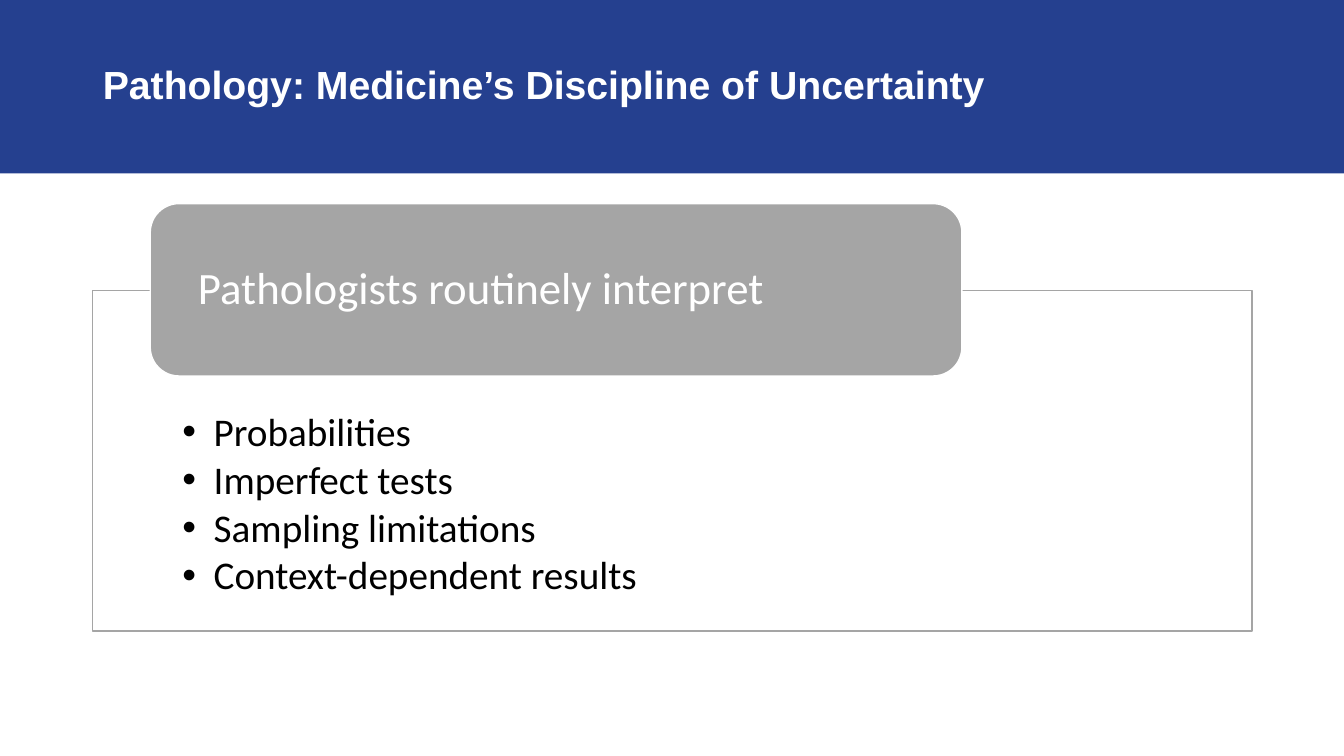
"""Build the slide on pathology as a discipline of uncertainty."""
from dataclasses import dataclass
from typing import Optional

from lxml.etree import SubElement
from pptx import Presentation
from pptx.dml.color import RGBColor
from pptx.enum.shapes import MSO_SHAPE
from pptx.enum.text import MSO_ANCHOR, PP_ALIGN
from pptx.oxml.ns import qn
from pptx.util import Inches, Pt

COLORS = {"navy": "25408F", "gray": "A5A5A5", "white": "FFFFFF", "black": "000000"}


@dataclass
class Panel:
    """A filled shape with its place and colours."""
    kind: MSO_SHAPE
    box: tuple[float, float, float, float]
    fill: str
    line: Optional[str] = None


@dataclass
class TextStyle:
    """The look of one block of text."""
    font: str
    size: int
    color: str
    margins: tuple[float, float, float, float]
    anchor: MSO_ANCHOR = MSO_ANCHOR.MIDDLE
    bold: bool = False
    bullet: bool = False
    after: float = 0


BANNER = Panel(MSO_SHAPE.RECTANGLE, (0, 0, 13.33, 1.72), "navy")
FRAME = Panel(MSO_SHAPE.RECTANGLE, (0.92, 2.88, 11.5, 3.38), "white", "gray")
HEADING = Panel(MSO_SHAPE.ROUNDED_RECTANGLE, (1.49, 2.02, 8.05, 1.71), "gray", "white")

TITLE_STYLE = TextStyle("Arial", 28, "white", (0.1, 0.05, 0.1, 0.05), bold=True)
HEADING_STYLE = TextStyle("Calibri", 32, "white", (0.39, 0, 0.39, 0))
LIST_STYLE = TextStyle("Calibri", 28, "black", (0.89, 1.21, 0.89, 0.22),
                       anchor=MSO_ANCHOR.TOP, bullet=True, after=4)

TOPICS = ["Probabilities", "Imperfect tests", "Sampling limitations",
          "Context-dependent results"]


def rgb(name: str) -> RGBColor:
    """Return a named colour."""
    return RGBColor.from_string(COLORS[name])


def add_panel(s, panel: Panel):
    """Draw a panel and return its shape."""
    sp = s.shapes.add_shape(panel.kind, *map(Inches, panel.box))
    sp.shadow.inherit = False
    sp.fill.solid()
    sp.fill.fore_color.rgb = rgb(panel.fill)
    if panel.line:
        sp.line.color.rgb = rgb(panel.line)
        sp.line.width = Pt(1)
    else:
        sp.line.fill.background()
    return sp


def add_bullet(p) -> None:
    """Give a paragraph a hanging bullet."""
    pPr = p._p.get_or_add_pPr()
    pPr.set("marL", str(Inches(0.31)))
    pPr.set("indent", str(-Inches(0.31)))
    SubElement(pPr, qn("a:buFont")).set("typeface", "Arial")
    SubElement(pPr, qn("a:buChar")).set("char", "•")


def write(sp, lines: list[str], style: TextStyle) -> None:
    """Fill a shape with one paragraph per line."""
    tf = sp.text_frame
    tf.word_wrap = True
    tf.vertical_anchor = style.anchor
    tf.margin_left, tf.margin_top, tf.margin_right, tf.margin_bottom = map(
        Inches, style.margins)
    for i, line in enumerate(lines):
        p = tf.add_paragraph() if i else tf.paragraphs[0]
        p.alignment = PP_ALIGN.LEFT
        p.line_spacing = 0.9
        p.space_before = Pt(0)
        p.space_after = Pt(style.after)
        if style.bullet:
            p.level = 1
            add_bullet(p)
        r = p.add_run()
        r.text = line
        r.font.name = style.font
        r.font.size = Pt(style.size)
        r.font.bold = style.bold
        r.font.color.rgb = rgb(style.color)


def main() -> None:
    """Build and save the slide."""
    prs = Presentation()
    prs.slide_width, prs.slide_height = Inches(13.33), Inches(7.5)
    s = prs.slides.add_slide(prs.slide_layouts[5])
    title = s.shapes.title
    title.left, title.top, title.width, title.height = map(
        Inches, (0.92, 0.14, 11.5, 1.45))
    write(title, ["Pathology: Medicine’s Discipline of Uncertainty"], TITLE_STYLE)
    title.element.addprevious(add_panel(s, BANNER).element)
    write(add_panel(s, FRAME), TOPICS, LIST_STYLE)
    write(add_panel(s, HEADING), ["Pathologists routinely interpret"], HEADING_STYLE)
    prs.save("out.pptx")


if __name__ == "__main__":
    main()
